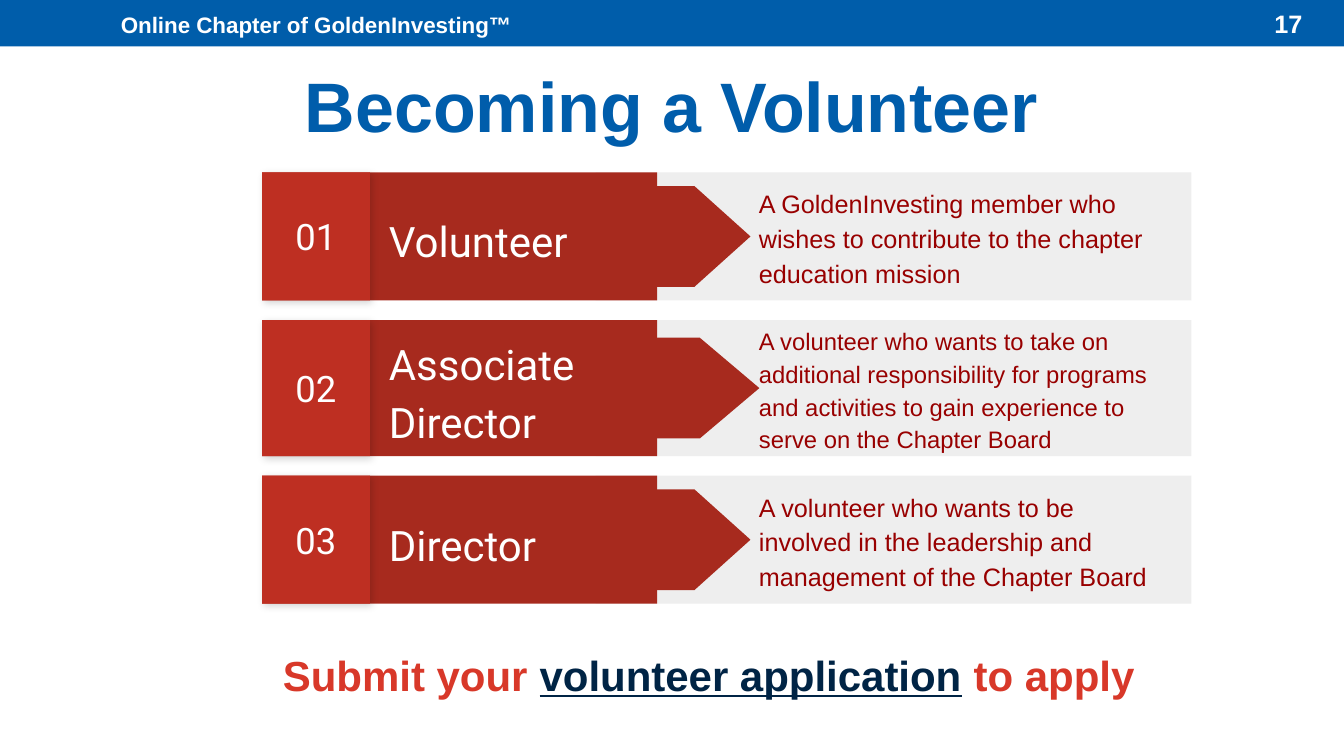
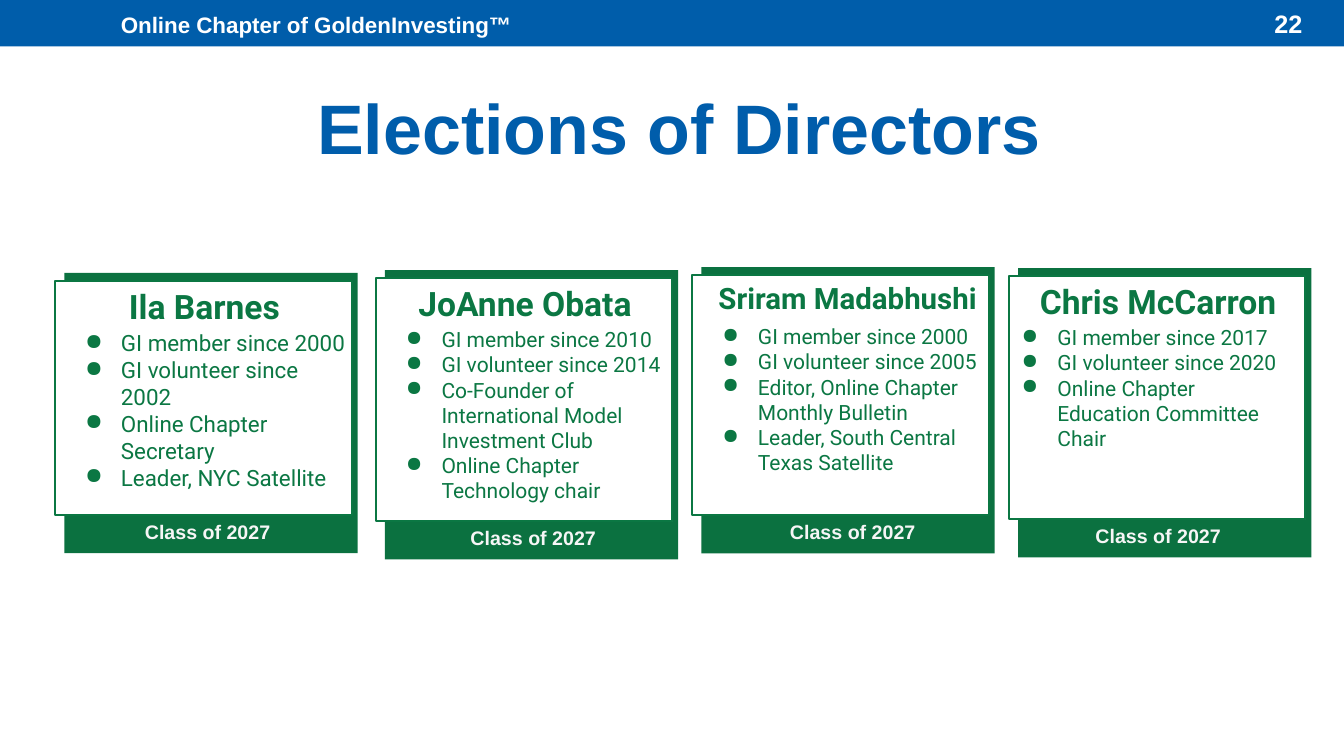
from dataclasses import dataclass

from lxml import etree
from pptx import Presentation
from pptx.dml.color import RGBColor
from pptx.enum import shapes, text
from pptx.oxml import ns
from pptx.util import Pt

WIDTH, HEIGHT = 960, 540
BLUE, TITLE_BLUE, NAVY, WHITE = "005DAA", "005DAB", "002445", "FFFFFF"
DARK_RED, RED, SHADE_RED = "A72A1E", "BE2F22", "B02C20"
TEXT_RED, CALL_RED, GREY = "980000", "D83829", "EEEEEE"
CARD_GREEN, GREEN, PALE = "0B7140", "0B7743", "F6F6F6"
LEFT, CENTER, RIGHT = text.PP_ALIGN.LEFT, text.PP_ALIGN.CENTER, text.PP_ALIGN.RIGHT
TOP, MIDDLE = text.MSO_ANCHOR.TOP, text.MSO_ANCHOR.MIDDLE
RECTANGLE = shapes.MSO_SHAPE.RECTANGLE
ARROW = shapes.MSO_SHAPE.FLOWCHART_OFFPAGE_CONNECTOR


@dataclass
class Step:
    """One stage of volunteering."""
    number: str
    label: str
    description: str
    height: float = 91.4
    size: int = 18


@dataclass
class Director:
    """One director's card; offsets are relative to the card's box."""
    name: str
    facts: list
    box: tuple
    class_left: float
    size: int = 15
    name_size: int = 24
    name_left: float = -5.8
    facts_left: float = -5


STEPS = [
    Step("01", "Volunteer",
         "A GoldenInvesting member who wishes to contribute to the chapter education mission"),
    Step("02", "Associate Director",
         "A volunteer who wants to take on additional responsibility for programs "
         "and activities to gain experience to serve on the Chapter Board", 97.2, 17),
    Step("03", "Director",
         "A volunteer who wants to be involved in the leadership and management "
         "of the Chapter Board"),
]

DIRECTORS = [
    Director("Ila Barnes",
             ["GI member since 2000", "GI volunteer since 2002",
              "Online Chapter Secretary", "Leader, NYC Satellite"],
             (46, 195, 209.5, 200.2), 50.4, size=16),
    Director("JoAnne Obata",
             ["GI member since 2010", "GI volunteer since 2014",
              "Co-Founder of International Model Investment Club",
              "Online Chapter Technology chair"],
             (275, 193, 209.5, 206.6), 54),
    Director("Sriram Madabhushi",
             ["GI member since 2000", "GI volunteer since 2005",
              "Editor, Online Chapter Monthly Bulletin",
              "Leader, South Central Texas Satellite"],
             (501, 190.8, 209.5, 204.5), 56.2, name_size=21, name_left=-1.4),
    Director("Chris McCarron",
             ["GI member since 2017", "GI volunteer since 2020",
              "Online Chapter Education Committee Chair"],
             (727.2, 191.5, 209.5, 206.6), 48.2, facts_left=-17.3),
]


def color(value):
    """Turn a hex string into a colour."""
    return RGBColor.from_string(value)


def add_box(slide, box, fill, line=None, kind=RECTANGLE):
    """Add a flat filled shape with an optional outline."""
    shape = slide.shapes.add_shape(kind, *map(Pt, box))
    shape.shadow.inherit = False
    shape.fill.solid()
    shape.fill.fore_color.rgb = color(fill)
    if line:
        shape.line.color.rgb = color(line)
        shape.line.width = Pt(1.5)
    else:
        shape.line.fill.background()
    return shape


def add_shadow(shape):
    """Give a shape a soft black shadow."""
    effects = shape._element.spPr.find(ns.qn("a:effectLst"))
    shadow = etree.SubElement(effects, ns.qn("a:outerShdw"), blurRad=str(Pt(5.6)),
                              dist=str(Pt(2.2)), dir="2700000", algn="bl", rotWithShape="0")
    black = etree.SubElement(shadow, ns.qn("a:srgbClr"), val="000000")
    etree.SubElement(black, ns.qn("a:alpha"), val="17000")


def set_indent(paragraph, left, hanging=0, bullet_color=None):
    """Indent a paragraph and optionally give it a round bullet."""
    properties = paragraph._p.get_or_add_pPr()
    properties.set("marL", str(Pt(left)))
    properties.set("indent", str(Pt(-hanging)))
    if bullet_color:
        holder = etree.SubElement(properties, ns.qn("a:buClr"))
        etree.SubElement(holder, ns.qn("a:srgbClr"), val=bullet_color)
        etree.SubElement(properties, ns.qn("a:buChar"), char="●")


def add_text(slide, box, lines, size, fill, font="Arial", bold=False, align=LEFT,
             anchor=TOP, inset=(7.2, 7.2), spacing=None, indent=0, hanging=0):
    """Add a wrapped text box with one paragraph per line; a hanging indent is bulleted."""
    frame = slide.shapes.add_textbox(*map(Pt, box)).text_frame
    frame.word_wrap = True
    frame.vertical_anchor = anchor
    frame.margin_left = frame.margin_right = Pt(inset[0])
    frame.margin_top = frame.margin_bottom = Pt(inset[1])
    for index, line in enumerate(lines):
        paragraph = frame.paragraphs[0] if index == 0 else frame.add_paragraph()
        paragraph.text = line
        paragraph.alignment = align
        if spacing:
            paragraph.line_spacing = spacing
        if indent:
            set_indent(paragraph, indent, hanging, fill if hanging else None)
        paragraph.font.name = font
        paragraph.font.size = Pt(size)
        paragraph.font.bold = bold
        paragraph.font.color.rgb = color(fill)
    return frame


def add_frame(presentation, title, number, title_left, title_top):
    """Add a slide with the top band, its number and a title."""
    slide = presentation.slides.add_slide(presentation.slide_layouts[6])
    add_box(slide, (0, 0, WIDTH, 33.1), BLUE)
    add_text(slide, (79.2, 0.7, 442, 33.8), ["Online Chapter of GoldenInvesting™"],
             16, WHITE, bold=True)
    add_text(slide, (title_left, title_top, 864, 77.8), [title], 50, TITLE_BLUE, bold=True,
             align=CENTER, anchor=MIDDLE, inset=(7.2, 3.6))
    add_text(slide, (887, 0, 50.4, 33.1), [number], 18, WHITE, bold=True,
             align=RIGHT, anchor=MIDDLE, inset=(7.2, 3.6))
    return slide


def add_step(slide, step, left, top):
    """Add one row: number, label with arrow, and description."""
    height = step.height
    number_box = (left, top, 77, height)
    add_box(slide, (left + 238.3, top, 425.5, height), GREY)
    add_box(slide, (left + 77, top, 205.2, height), DARK_RED)
    arrow_length, arrow_width = 2.19 * height, 72
    arrow = add_box(slide, (left + 248.8 - arrow_width / 2, top + (height - arrow_length) / 2,
                            arrow_width, arrow_length), DARK_RED, kind=ARROW)
    arrow.rotation = 270
    add_text(slide, (left + 83.5, top + 0.7, 216, height), [step.label], 30, WHITE, "Roboto",
             anchor=MIDDLE, spacing=1.15)
    add_shadow(add_box(slide, number_box, SHADE_RED))
    add_box(slide, number_box, RED)
    add_text(slide, number_box, [step.number], 26, WHITE, "Roboto", align=CENTER, anchor=MIDDLE)
    add_text(slide, (left + 311.8, top, 330.5, height), [step.description], step.size, TEXT_RED,
             anchor=MIDDLE, spacing=1.15, indent=36)


def add_call(slide, box):
    """Add the closing call to apply."""
    frame = add_text(slide, box, [""], 30, CALL_RED, bold=True)
    paragraph = frame.paragraphs[0]
    for words, underlined in (("Submit your ", False), ("volunteer application", True),
                              (" to apply", False)):
        run = paragraph.add_run()
        run.text = words
        if underlined:
            run.font.underline = True
            run.font.color.rgb = color(NAVY)


def add_card(slide, director):
    """Add a director's card with name, facts and class."""
    left, top, width, height = director.box
    inset = (9.4, 9.4)
    add_box(slide, director.box, CARD_GREEN)
    add_box(slide, (left - 6.5, top + 5.8, width + 2.2, height - 33), WHITE, GREEN)
    add_text(slide, (left + director.facts_left, top + 31, 219.6, height - 69), director.facts,
             director.size, GREEN, "Roboto", inset=inset, indent=36, hanging=25.5)
    add_text(slide, (left + director.name_left, top, 211.7, 53), [director.name],
             director.name_size, GREEN, "Roboto", bold=True, align=CENTER, inset=inset)
    add_text(slide, (left + director.class_left, top + height - 30.8, 122.4, 31.7),
             ["Class of 2027"], 14, PALE, bold=True)


def build_volunteer(presentation):
    """Build the slide on the steps of volunteering."""
    slide = add_frame(presentation, "Becoming a Volunteer", "17", 48, 36)
    top = 123.2
    for step in STEPS:
        add_step(slide, step, 187.2, top)
        top += step.height + 14
    add_call(slide, (195, 456.5, 656, 51))


def build_elections(presentation):
    """Build the slide of director cards."""
    slide = add_frame(presentation, "Elections of Directors", "22", 53.3, 51.1)
    for director in DIRECTORS:
        add_card(slide, director)


def main():
    """Build and save the presentation."""
    presentation = Presentation()
    presentation.slide_width, presentation.slide_height = Pt(WIDTH), Pt(HEIGHT)
    build_volunteer(presentation)
    build_elections(presentation)
    presentation.save("out.pptx")


if __name__ == "__main__":
    main()
